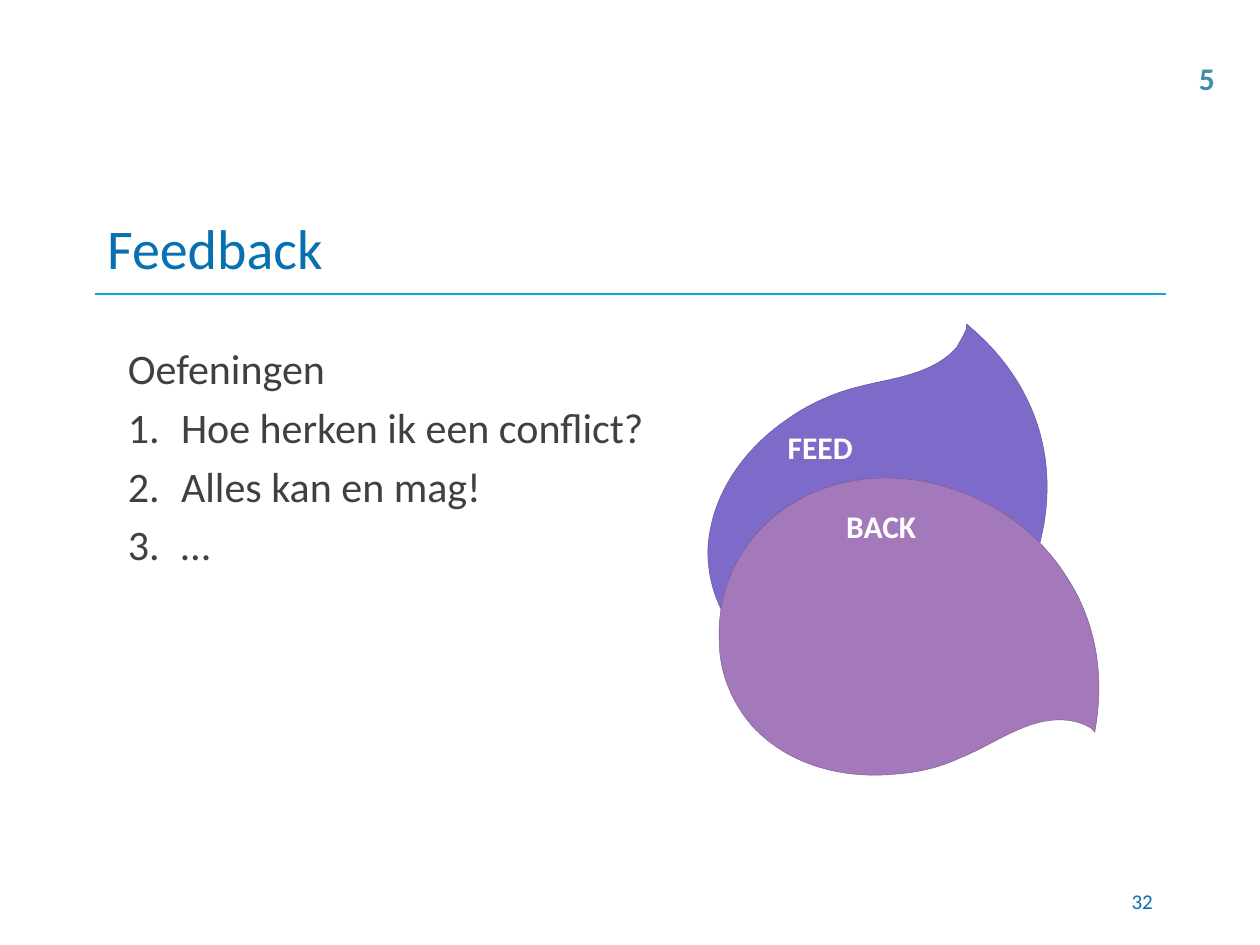
"""Build the Feedback slide with its exercise list and two leaves."""
from math import cos, radians, sin
from lxml.etree import SubElement as Sub
from pptx import Presentation
from pptx.dml.color import RGBColor
from pptx.enum.shapes import MSO_CONNECTOR as Conn, MSO_SHAPE as Kind
from pptx.enum.text import MSO_ANCHOR as Anchor, PP_ALIGN as Align
from pptx.oxml.ns import qn
from pptx.util import Cm, Pt

FONT = "Calibri"
BLUE, GREY, WHITE = "0770B1", "404040", "FFFFFF"
RULE = (1.91, 5.93, 23.5, 5.93)
PANEL = (2.33, 6.78, 21.6, 10.37)
HEAD = "Oefeningen"
TASKS = ["Hoe herken ik een conflict?", "Alles kan en mag!", "…"]

LEAVES = [
    dict(fill="7E6BC9", edge="5D4F95", box=(14.2, 7.7, 7.49, 5.99), turn=149.2,
         start=(19.48, 6.53), notch=(19.48, 6.63), curves=[
             (19.43, 6.76, 19.35, 6.88, 19.28, 7.01),
             (18.72, 7.62, 17.83, 7.62, 17.04, 7.87),
             (16.64, 8, 16.26, 8.18, 15.93, 8.41),
             (15.01, 9.02, 14.33, 9.96, 14.27, 11.05),
             (14.25, 11.66, 14.45, 12.29, 14.86, 12.78),
             (15.54, 13.64, 16.46, 14.05, 17.42, 14),
             (18.69, 13.94, 19.89, 13.16, 20.55, 11.94),
             (21.01, 11.15, 21.18, 10.21, 21.08, 9.32),
             (20.96, 8.31, 20.45, 7.32, 19.48, 6.53)]),
    dict(fill="A379BB", edge="795A8A", box=(14.45, 9.58, 7.49, 5.99), turn=350.9,
         start=(22.07, 14.76), notch=(22, 14.68), curves=[
             (21.87, 14.6, 21.72, 14.55, 21.59, 14.53),
             (20.78, 14.4, 20.09, 14.99, 19.33, 15.29),
             (18.95, 15.47, 18.52, 15.57, 18.11, 15.6),
             (17.02, 15.72, 15.9, 15.44, 15.16, 14.63),
             (14.76, 14.17, 14.5, 13.56, 14.5, 12.93),
             (14.45, 11.84, 14.94, 10.92, 15.7, 10.34),
             (16.69, 9.58, 18.11, 9.42, 19.41, 9.93),
             (20.27, 10.26, 21.01, 10.85, 21.49, 11.61),
             (22.05, 12.45, 22.3, 13.54, 22.07, 14.76)]),
]

SLIM = (0.13, 0.13)
WIDE = (0.25, 0.13)
LABELS = [
    dict(text="32", box=(18.21, 17.65, 5.28, 1.02), size=12, tint=BLUE,
         align=Align.RIGHT, anchor=Anchor.MIDDLE),
    dict(text="BACK", box=(16.93, 10.09, 3.33, 1.02), size=18, tint=WHITE, bold=True, pad=SLIM),
    dict(text="FEED", box=(15.75, 8.49, 3.33, 1.02), size=18, tint=WHITE, bold=True, pad=SLIM),
    dict(text="Feedback", box=(1.91, 4.03, 21.59, 1.9), size=32, tint=BLUE, anchor=Anchor.MIDDLE),
    dict(text="5", box=(23.92, 1.07, 0.84, 1.02), size=18, tint="3E8EA9", bold=True, wrap=False),
]


def cms(nums):
    return [Cm(n) for n in nums]


def rgb(tint):
    return RGBColor.from_string(tint)


def paint(shape, tint):
    shape.shadow.inherit = False
    shape.fill.solid()
    shape.fill.fore_color.rgb = rgb(tint)


def write(para, text, size, tint, bold=False):
    run = para.add_run()
    run.text = text
    font = run.font
    font.name, font.size, font.bold = FONT, Pt(size), bold
    font.color.rgb = rgb(tint)


def add_rule(slide):
    line = slide.shapes.add_connector(Conn.STRAIGHT, *cms(RULE))
    line.line.color.rgb = rgb("0BA7DF")
    line.line.width = Pt(1)
    Sub(line._element.spPr, qn("a:effectLst"))


def add_list(slide):
    panel = slide.shapes.add_shape(Kind.RECTANGLE, *cms(PANEL))
    paint(panel, WHITE)
    panel.line.fill.background()
    frame = panel.text_frame
    frame.word_wrap = True
    frame.vertical_anchor = Anchor.TOP
    for i, text in enumerate([HEAD] + TASKS):
        para = frame.add_paragraph() if i else frame.paragraphs[0]
        para.alignment = Align.LEFT
        if i:
            para.space_before = Pt(4.8)
            props = para._p.get_or_add_pPr()
            props.set("marL", str(Cm(1.07)))
            props.set("indent", str(-Cm(1.07)))
            Sub(props, qn("a:buFont"), typeface=FONT)
            Sub(props, qn("a:buAutoNum"), type="arabicPeriod")
        write(para, text, 24, GREY)


def unturn(dot, box, turn):
    left, top, wide, high = box
    dx, dy = dot[0] - left - wide / 2, dot[1] - top - high / 2
    c, s = cos(radians(turn)), sin(radians(turn))
    return wide / 2 + dx * c + dy * s, high / 2 + dy * c - dx * s


def add_leaf(slide, fill, edge, box, turn, start, notch, curves):
    left, top, wide, high = cms(box)
    pen = slide.shapes.build_freeform(0, 0)
    pen.add_line_segments([(wide, high)], close=True)
    leaf = pen.convert_to_shape(left, top)
    trail = leaf._element.find(".//" + qn("a:path"))
    for step in list(trail):
        trail.remove(step)
    steps = [("a:moveTo", start), ("a:lnTo", notch)]
    steps += [("a:cubicBezTo", curve) for curve in curves]
    for tag, nums in steps:
        node = Sub(trail, qn(tag))
        for dot in zip(nums[::2], nums[1::2]):
            x, y = cms(unturn(dot, box, turn))
            Sub(node, qn("a:pt"), x=str(x), y=str(y))
    Sub(trail, qn("a:close"))
    leaf.rotation = turn
    paint(leaf, fill)
    leaf.line.color.rgb = rgb(edge)
    leaf.line.width = Pt(0.25)


def add_label(slide, text, box, size, tint, bold=False, pad=WIDE,
              align=Align.LEFT, anchor=Anchor.TOP, wrap=True):
    frame = slide.shapes.add_textbox(*cms(box)).text_frame
    frame.word_wrap = wrap
    frame.vertical_anchor = anchor
    frame.margin_left = frame.margin_right = Cm(pad[0])
    frame.margin_top = frame.margin_bottom = Cm(pad[1])
    para = frame.paragraphs[0]
    para.alignment = align
    write(para, text, size, tint, bold)


def main():
    deck = Presentation()
    deck.slide_width, deck.slide_height = Cm(25.4), Cm(19.05)
    slide = deck.slides.add_slide(deck.slide_layouts[6])
    add_rule(slide)
    add_list(slide)
    for leaf in LEAVES:
        add_leaf(slide, **leaf)
    for label in LABELS:
        add_label(slide, **label)
    deck.save("out.pptx")


if __name__ == "__main__":
    main()
